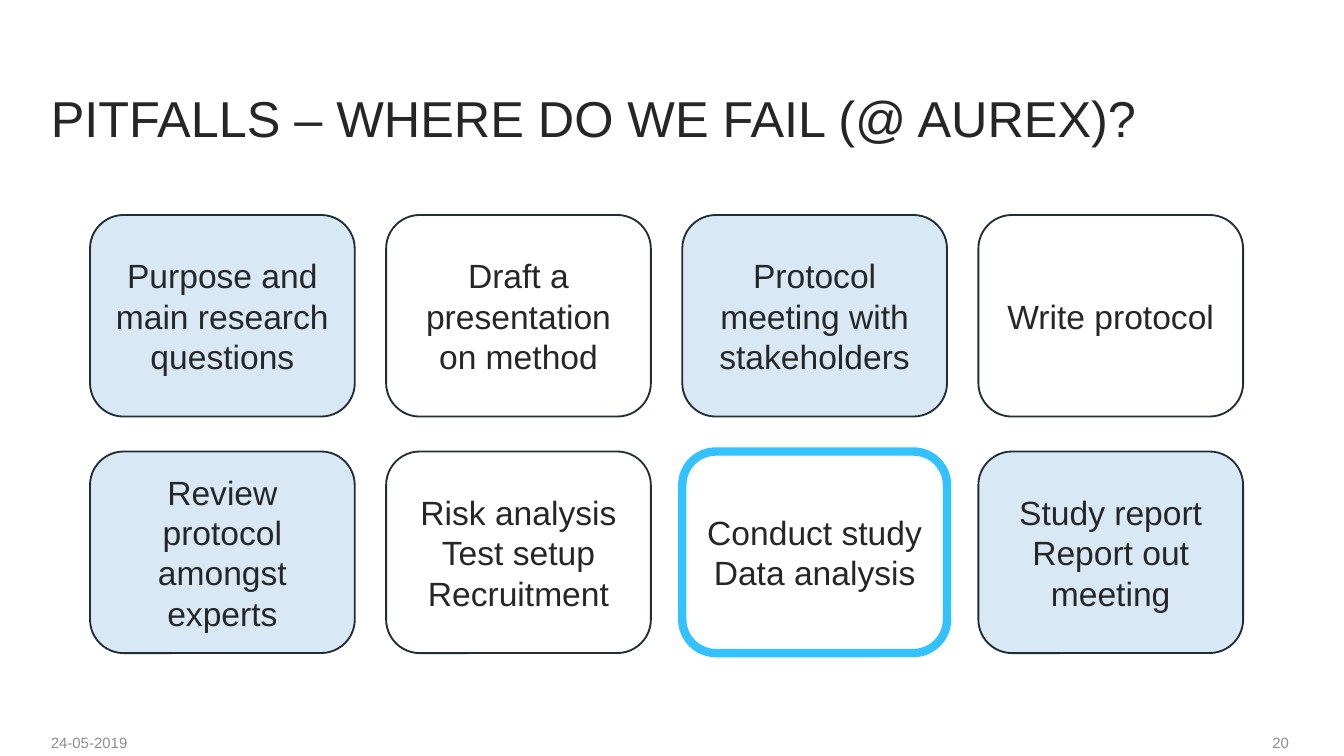
from pptx import Presentation
from pptx.dml.color import RGBColor
from pptx.enum.shapes import MSO_SHAPE as Shape
from pptx.enum.text import MSO_ANCHOR as Anchor, PP_ALIGN as Align
from pptx.util import Inches, Pt

WHITE = RGBColor(0xFF, 0xFF, 0xFF)
PALE_BLUE = RGBColor(0xD8, 0xE9, 0xF5)
BRIGHT_BLUE = RGBColor(0x33, 0xC1, 0xFF)
OUTLINE = RGBColor(0x21, 0x2E, 0x37)
TEXT = RGBColor(0x26, 0x26, 0x26)
GREY = RGBColor(0x8E, 0x8E, 0x8E)

SLIDE_WIDTH = Inches(10)
SLIDE_HEIGHT = SLIDE_WIDTH * 9 // 16

COLUMNS = 4
GRID_LEFT, GRID_RIGHT, GRID_TOP = 0.67, 9.25, 1.6
CARD_WIDTH, CARD_HEIGHT = 1.97, 1.5
COLUMN_STEP = (GRID_RIGHT - GRID_LEFT - CARD_WIDTH) / (COLUMNS - 1)
ROW_STEP = 1.76

STEPS = [
    ("Purpose and main research questions", "filled"),
    ("Draft a presentation on method", "plain"),
    ("Protocol meeting with stakeholders", "filled"),
    ("Write protocol", "plain"),
    ("Review protocol amongst experts", "filled"),
    ("Risk analysis\nTest setup\nRecruitment", "plain"),
    ("Conduct study\nData analysis", "highlighted"),
    ("Study report\nReport out meeting", "filled"),
]
STYLES = {
    "filled": (PALE_BLUE, OUTLINE, 1),
    "plain": (None, OUTLINE, 1),
    "highlighted": (None, BRIGHT_BLUE, 4.5),
}


def write_text(shape, text, size=18, color=TEXT, align=Align.LEFT,
               anchor=Anchor.TOP, top=0.05, bottom=0.05):
    frame = shape.text_frame
    frame.word_wrap = True
    frame.vertical_anchor = anchor
    frame.margin_left = frame.margin_right = Inches(0.1)
    frame.margin_top, frame.margin_bottom = Inches(top), Inches(bottom)
    frame.text = text
    for paragraph in frame.paragraphs:
        paragraph.alignment = align
        paragraph.font.name = "Arial"
        paragraph.font.size = Pt(size)
        paragraph.font.color.rgb = color


def add_text(slide, box, text, **text_format):
    shape = slide.shapes.add_textbox(*map(Inches, box))
    write_text(shape, text, **text_format)


def add_card(slide, index, text, style):
    row, column = divmod(index, COLUMNS)
    box = (GRID_LEFT + column * COLUMN_STEP, GRID_TOP + row * ROW_STEP,
           CARD_WIDTH, CARD_HEIGHT)
    card = slide.shapes.add_shape(Shape.ROUNDED_RECTANGLE, *map(Inches, box))
    card.shadow.inherit = False
    fill, line, width = STYLES[style]
    if fill is None:
        card.fill.background()
    else:
        card.fill.solid()
        card.fill.fore_color.rgb = fill
    card.line.color.rgb = line
    card.line.width = Pt(width)
    write_text(card, text, align=Align.CENTER, anchor=Anchor.MIDDLE)


def add_footer(slide, left, text, align):
    add_text(slide, (left, 5.46, 2.33, 0.4), text, size=8, color=GREY,
             align=align, top=0, bottom=0.04)


def main():
    presentation = Presentation()
    presentation.slide_width = SLIDE_WIDTH
    presentation.slide_height = SLIDE_HEIGHT
    slide = presentation.slides.add_slide(presentation.slide_layouts[6])
    slide.background.fill.solid()
    slide.background.fill.fore_color.rgb = WHITE

    add_footer(slide, 0.28, "24-05-2019", Align.LEFT)
    add_footer(slide, 7.36, "20", Align.RIGHT)
    add_text(slide, (0.28, 0.22, 9.45, 0.93),
             "PITFALLS – WHERE DO WE FAIL (@ AUREX)?",
             size=27, anchor=Anchor.BOTTOM)
    for index, (text, style) in enumerate(STEPS):
        add_card(slide, index, text, style)

    presentation.save("out.pptx")


if __name__ == "__main__":
    main()
